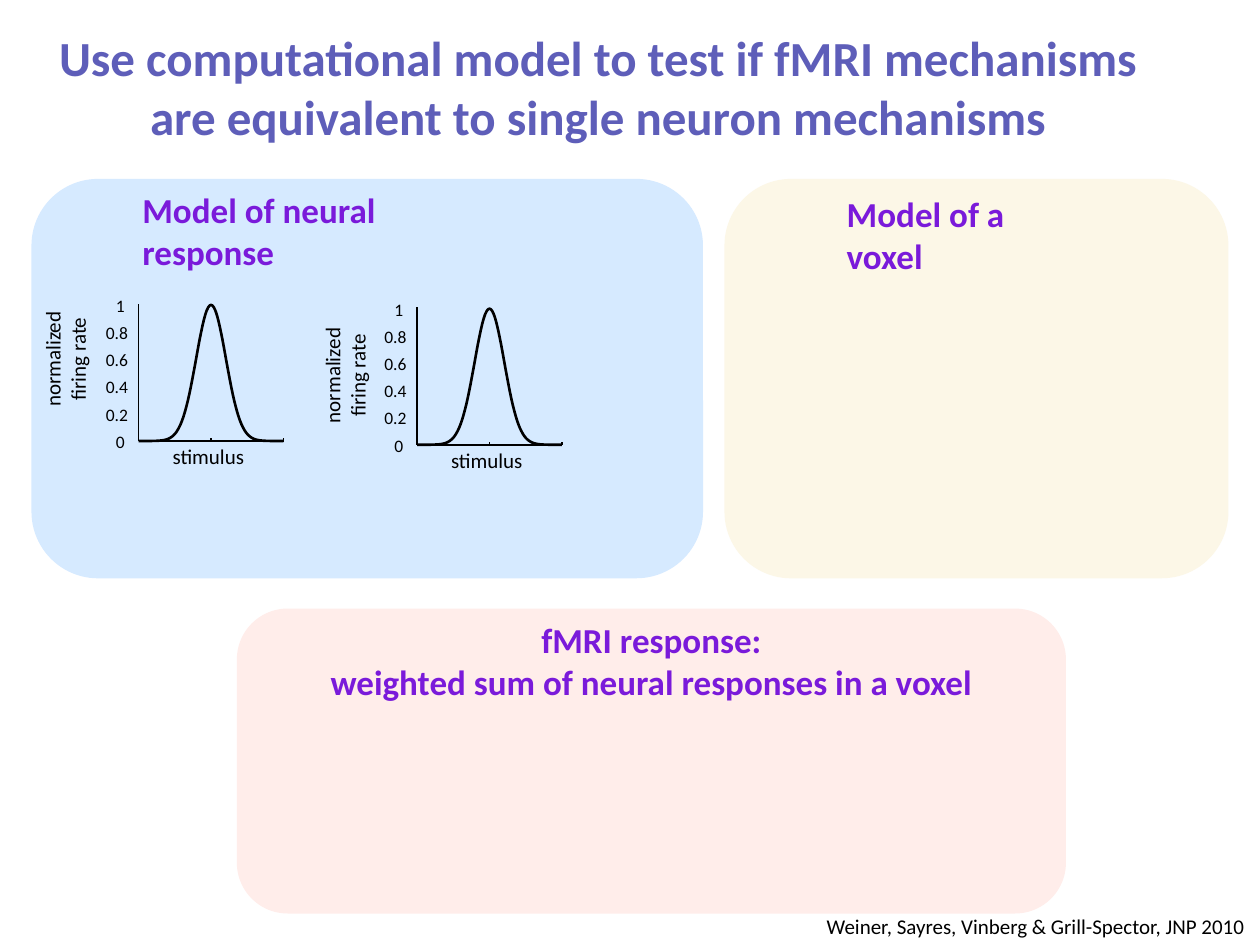
from math import exp
from pptx import Presentation
from pptx.dml.color import RGBColor as RGB
from pptx.enum.shapes import MSO_CONNECTOR as CONN, MSO_SHAPE as SHAPE
from pptx.enum.text import MSO_AUTO_SIZE as AUTO, PP_ALIGN as ALIGN
from pptx.oxml.ns import qn
from pptx.util import Inches, Pt
from lxml.etree import SubElement

COLORS = {"title": "5E5EB9", "heading": "7A1ADA", "ink": "000000",
          "neural": "D6EAFF", "voxel": "FCF7E7", "fmri": "FFEDEA"}

prs = Presentation()
prs.slide_width, prs.slide_height = Inches(10), Inches(7.5)
s = prs.slides.add_slide(prs.slide_layouts[6])


def add_text(box, lines, size, color="ink", bold=False, align=ALIGN.LEFT,
             insets=(0, 0, 0, 0), wrap=False, indent=0):
    sp = s.shapes.add_textbox(*map(Inches, box))
    tf = sp.text_frame
    left, top, right, bottom = map(Inches, insets)
    frame = {"margin_left": left, "margin_top": top, "margin_right": right,
             "margin_bottom": bottom, "word_wrap": wrap,
             "auto_size": AUTO.SHAPE_TO_FIT_TEXT}
    for name, value in frame.items():
        setattr(tf, name, value)
    for i, line in enumerate(lines):
        p = tf.add_paragraph() if i else tf.paragraphs[0]
        p.alignment = align
        if indent:
            p_pr = p._p.get_or_add_pPr()
            p_pr.set("marL", str(Inches(indent)))
            p_pr.set("indent", "0")
        r = p.add_run()
        r.text = line
        for name, value in {"name": "Calibri", "size": Pt(size), "bold": bold}.items():
            setattr(r.font, name, value)
        r.font.color.rgb = RGB.from_string(COLORS[color])
    return sp


def add_line(x1, y1, x2, y2):
    c = s.shapes.add_connector(CONN.STRAIGHT, *map(Inches, (x1, y1, x2, y2)))
    c.line.width = Pt(1)
    c.line.color.rgb = RGB.from_string(COLORS["ink"])
    SubElement(c._element.spPr, qn("a:effectLst"))


# Panels
for color, box in {"fmri": (1.88, 4.83, 6.58, 2.42),
                   "voxel": (5.75, 1.42, 4, 3.17),
                   "neural": (0.25, 1.42, 5.33, 3.17)}.items():
    sp = s.shapes.add_shape(SHAPE.ROUNDED_RECTANGLE, *map(Inches, box))
    sp.shadow.inherit = False
    sp.fill.solid()
    sp.fill.fore_color.rgb = RGB.from_string(COLORS[color])
    sp.line.fill.background()

# Title
add_text((0.08, 0.17, 9.33, 1.04),
         ["Use computational model to test if fMRI mechanisms "
          "are equivalent to single neuron mechanisms"],
         28, "title", True, ALIGN.CENTER, (0.1, 0.05, 0.1, 0.05), True)

# Tuning curves: axis origin and left, top of the y-axis title
WIDTH, HEIGHT, SIGMA, STEPS = 1.15, 1.08, 0.118, 100
for x0, y0, title_x, title_y in ((1.1, 3.5, 0.13, 2.65), (3.31, 3.53, 2.35, 2.78)):
    # Axes and stimulus ticks
    add_line(x0, y0, x0 + WIDTH, y0)
    add_line(x0, y0, x0, y0 - 1.09)
    for k in range(3):
        x = x0 + k * WIDTH / 2
        add_line(x, y0, x, y0 - 0.02)

    # Firing-rate scale
    for k, label in enumerate(("0", "0.2", "0.4", "0.6", "0.8", "1")):
        dx, w = (0.18, 0.07) if len(label) == 1 else (0.26, 0.18)
        add_text((x0 - dx, y0 - 0.08 - k * HEIGHT / 5, w, 0.17), [label], 10)

    # Axis titles
    add_text((x0 + 0.27, y0 + 0.02, 0.57, 0.2), ["stimulus"], 12)
    sp = add_text((title_x, title_y, 0.77, 0.4), ["normalized", "firing rate"],
                  12, align=ALIGN.CENTER)
    sp.rotation = 270

    # Gaussian curve
    points = []
    for k in range(STEPS + 1):
        dx = WIDTH * k / STEPS
        rate = exp(-((dx - WIDTH / 2) / SIGMA) ** 2 / 2)
        points.append((Inches(x0 + dx), Inches(y0 - HEIGHT * rate)))
    fb = s.shapes.build_freeform(*points[0])
    fb.add_line_segments(points[1:], close=False)
    sp = fb.convert_to_shape()
    sp.shadow.inherit = False
    sp.fill.background()
    sp.line.width = Pt(1.5)
    sp.line.color.rgb = RGB.from_string(COLORS["ink"])

# Panel headings: the right inset sets where the line turns
for box, lines, align, inset in (
        ((1.09, 1.5, 3.04, 0.67), ["Model of neural response"], ALIGN.LEFT, 0.6),
        ((6.68, 1.53, 1.99, 0.67), ["Model of a voxel"], ALIGN.LEFT, 0.4),
        ((1.92, 4.91, 6.5, 0.67),
         ["fMRI response:", "weighted sum of neural responses in a voxel"],
         ALIGN.CENTER, 0.04)):
    add_text(box, lines, 20, "heading", True, align, (0, 0, inset, 0), True, 0.04)

# Citation
add_text((6.5, 7.25, 3.44, 0.2), ["Weiner, Sayres, Vinberg & Grill-Spector, JNP 2010"],
         12, align=ALIGN.CENTER, insets=(0, 0, 0.04, 0), indent=0.04)

prs.save("out.pptx")
